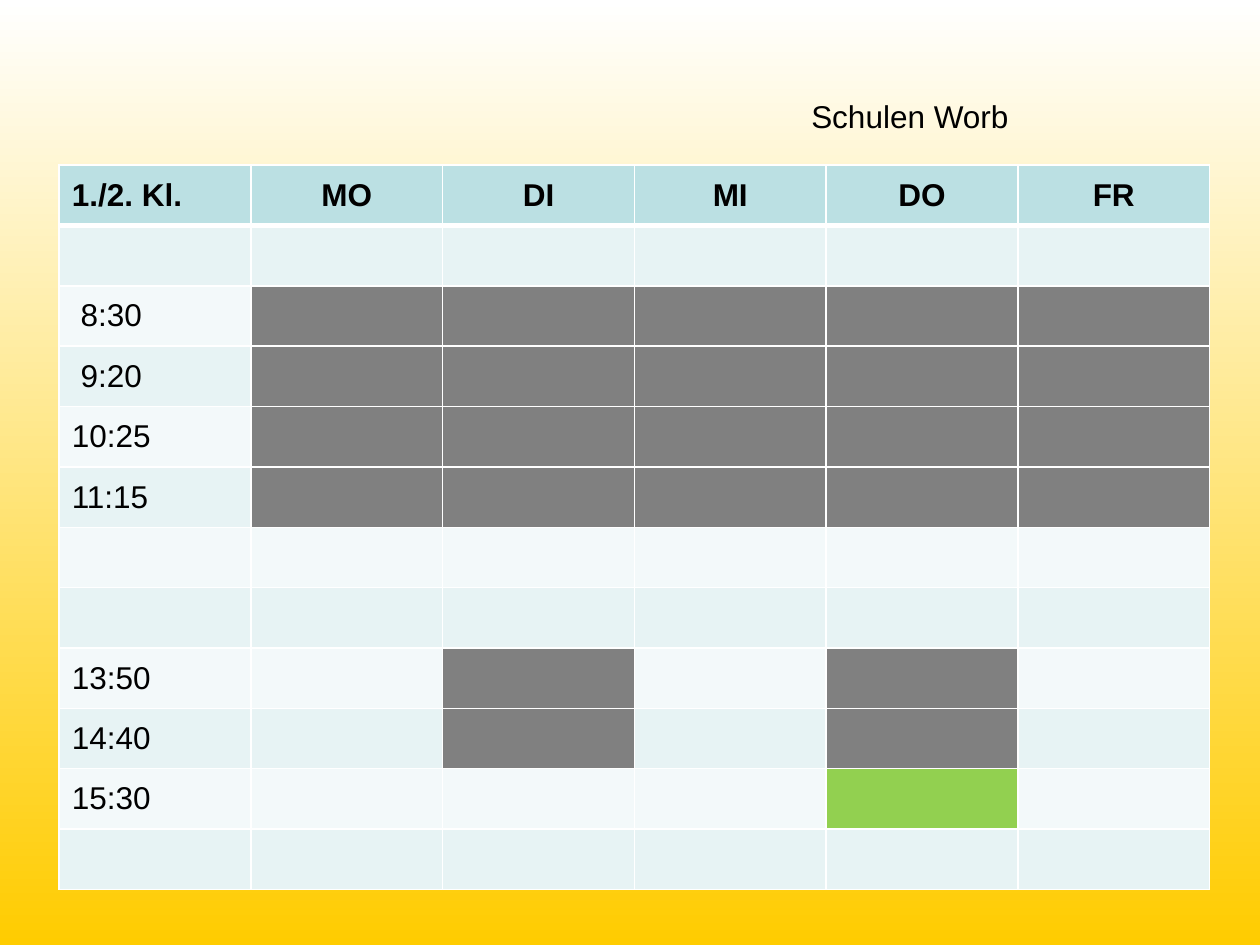
from lxml.etree import SubElement
from pptx import Presentation
from pptx.dml.color import RGBColor
from pptx.enum.text import MSO_ANCHOR, PP_ALIGN
from pptx.oxml.ns import qn
from pptx.util import Inches, Pt

HEADER, BAND_DARK, BAND_LIGHT = "BBE0E3", "E7F3F4", "F3F9FA"
LESSON, EXTRA = "808080", "92D050"


def color(value):
    return RGBColor.from_string(value)


def add_run(paragraph, text, bold=False):
    run = paragraph.add_run()
    run.text = text
    run.font.name = "Arial"
    run.font.size = Pt(18)
    run.font.bold = bold
    run.font.color.rgb = color("000000")


prs = Presentation()
prs.slide_width, prs.slide_height = Inches(10), Inches(7.5)
slide = prs.slides.add_slide(prs.slide_layouts[6])

# Background: white at the top to yellow at the bottom
background = slide.background.fill
background.gradient()
background.gradient_angle = 270
for stop, value in zip(background.gradient_stops, ("FFFFFF", "FFCC00")):
    stop.color.rgb = color(value)

# School name
school = slide.shapes.add_textbox(Inches(6.34), Inches(0.72), Inches(1.89), Inches(0.4))
school.text_frame.word_wrap = True
add_run(school.text_frame.paragraphs[0], "Schulen Worb")

# Timetable: x = lesson, e = extra lesson, . = free
days = ["1./2. Kl.", "MO", "DI", "MI", "DO", "FR"]
lessons = [
    ("", "....."),
    (" 8:30", "xxxxx"),
    (" 9:20", "xxxxx"),
    ("10:25", "xxxxx"),
    ("11:15", "xxxxx"),
    ("", "....."),
    ("", "....."),
    ("13:50", ".x.x."),
    ("14:40", ".x.x."),
    ("15:30", "...e."),
    ("", "....."),
]
slot_fills = {"x": LESSON, "e": EXTRA}

rows = [[(day, HEADER) for day in days]]
for index, (time, slots) in enumerate(lessons):
    band = BAND_LIGHT if index % 2 else BAND_DARK
    rows.append([(time, band)] + [("", slot_fills.get(slot, band)) for slot in slots])

timetable = slide.shapes.add_table(
    len(rows), len(days), Inches(0.47), Inches(1.31), Inches(9.13), Inches(5.75)
).table

for r, row in enumerate(rows):
    for c, (text, fill) in enumerate(row):
        cell = timetable.cell(r, c)
        cell.vertical_anchor = MSO_ANCHOR.MIDDLE
        if text:
            paragraph = cell.text_frame.paragraphs[0]
            if c > 0:
                paragraph.alignment = PP_ALIGN.CENTER
            add_run(paragraph, text, bold=r == 0)

        # White borders, thicker between the header and the first row
        properties = cell._tc.get_or_add_tcPr()
        for side in ("L", "R", "T", "B"):
            thick = (r, side) in ((0, "B"), (1, "T"))
            border = SubElement(properties, qn(f"a:ln{side}"), w=str(Pt(3 if thick else 1)))
            border_fill = SubElement(border, qn("a:solidFill"))
            SubElement(border_fill, qn("a:srgbClr"), val="FFFFFF")
        cell.fill.solid()
        cell.fill.fore_color.rgb = color(fill)

prs.save("out.pptx")
